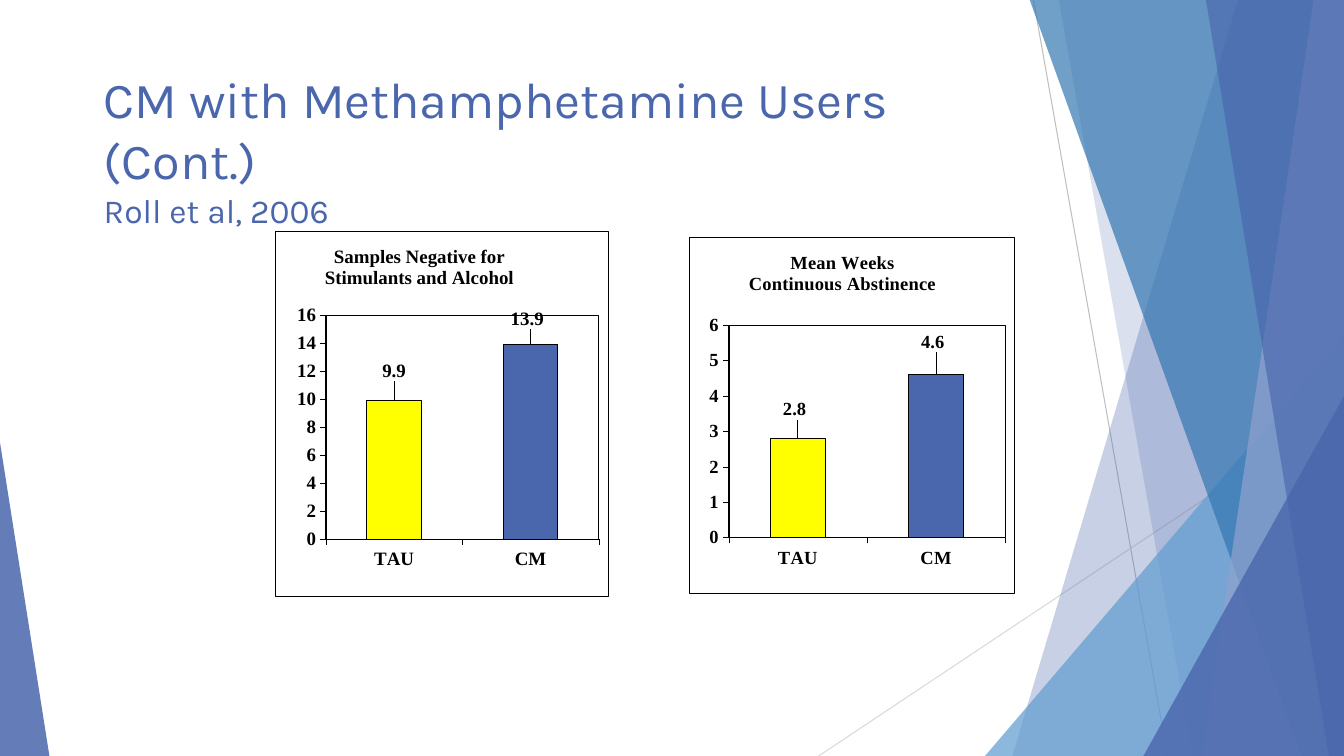
from lxml import etree
from pptx import Presentation
from pptx.chart.data import CategoryChartData
from pptx.dml.color import RGBColor
from pptx.enum.chart import XL_CHART_TYPE as ChartType, XL_LABEL_POSITION as LabelPosition
from pptx.enum.chart import XL_TICK_MARK as TickMark
from pptx.enum.shapes import MSO_CONNECTOR as Connector, MSO_SHAPE as Shape
from pptx.enum.text import MSO_ANCHOR as Anchor
from pptx.oxml import parse_xml
from pptx.oxml.ns import nsdecls, qn
from pptx.util import Inches, Pt

COLORS = {"blue": "4A66AC", "sky": "629DD1", "ocean": "3477B2", "lilac": "90A2CF",
          "yellow": "FFFF00", "black": "000000", "gray": "BFBFBF", "pale": "D9D9D9"}
WIDTH, HEIGHT, TOP = 13.33, 7.5, -0.01
TITLE = [("CM with Methamphetamine Users (Cont.)", 36), ("Roll et al, 2006", 24)]
RAYS = [((10.25, 0), (11.58, HEIGHT), "gray"), ((WIDTH, 4.03), (8.12, HEIGHT), "pale")]
BANDS = [
    ("band", (12.28, 10.04), "blue", 30),
    ("band", (10.5, 11.83), "blue", 20),
    ("triangle", (9.77, 3.33, 3.56, 1), "sky", 72),
    ("band", (10.21, 12.91), "ocean", 70),
    ("band", (13.03, 11.92), "lilac", 70),
    ("band", (11.96, 13.18), "blue", 65),
    ("triangle", (11.34, 3.93, 1.99, 1), "blue", 80),
    ("triangle", (0, 4.39, 0.49, 0), "blue", 85),
]
CATEGORIES = ["TAU", "CM"]
CHARTS = [
    {"title": "Samples Negative for\nStimulants and Alcohol", "values": [9.9, 13.9],
     "box": (2.73, 2.29, 3.3, 3.63), "plot": (0.152, 0.23, 0.821, 0.613),
     "title_at": (0.14, 0.03), "label_shift": [(0, -0.04), (-0.01, -0.03)],
     "max": 16, "step": 2, "size": 13.5},
    {"title": "Mean Weeks\nContinuous Abstinence", "values": [2.8, 4.6],
     "box": (6.83, 2.35, 3.23, 3.54), "plot": (0.123, 0.247, 0.85, 0.596),
     "title_at": (0.175, 0.03), "label_shift": [(-0.01, -0.04), (-0.01, -0.05)],
     "max": 6, "step": 1, "size": 13.2},
]


def color(name):
    return RGBColor.from_string(COLORS[name])


def set_font(font, size, name, tint, bold=False):
    font.size, font.name, font.bold = Pt(size), name, bold
    font.color.rgb = color(tint)


def set_line(line, width, tint="black"):
    line.color.rgb, line.width = color(tint), Pt(width)


def add_ray(page, start, end, tint):
    ray = page.shapes.add_connector(Connector.STRAIGHT, *map(Inches, start + end))
    set_line(ray.line, 0.75, tint)
    etree.SubElement(ray._element.spPr, qn("a:effectLst"))


def add_band(page, kind, where, tint, opacity):
    if kind == "band":
        top_x, bottom_x = where
        corners = [(top_x, TOP), (WIDTH, TOP), (WIDTH, HEIGHT), (bottom_x, HEIGHT)]
        points = [(Inches(x), Inches(y)) for x, y in corners]
        builder = page.shapes.build_freeform(*points[0])
        builder.add_line_segments(points[1:], close=True)
        band = builder.convert_to_shape()
    else:
        left, top, width, apex = where
        box = map(Inches, (left, top, width, HEIGHT - top))
        band = page.shapes.add_shape(Shape.ISOSCELES_TRIANGLE, *box)
        band.adjustments[0] = apex
    band.shadow.inherit = False
    band.line.fill.background()
    band.fill.solid()
    band.fill.fore_color.rgb = color(tint)
    fill = band._element.spPr.find(qn("a:solidFill"))
    etree.SubElement(fill[0], qn("a:alpha"), val=str(opacity * 1000))


def add_title(page):
    box = page.shapes.add_textbox(*map(Inches, (0.93, 0.63, 9.59, 1.62)))
    frame = box.text_frame
    frame.word_wrap, frame.vertical_anchor = True, Anchor.TOP
    para = frame.paragraphs[0]
    para.text = "\v".join(text for text, size in TITLE)
    for span, (text, size) in zip(para.runs, TITLE):
        set_font(span.font, size, "Karla", "blue")


def place(parent, index, values, inner=False, edge=False):
    for old in parent.findall(qn("c:layout")):
        parent.remove(old)
    layout = etree.Element(qn("c:layout"))
    manual = etree.SubElement(layout, qn("c:manualLayout"))
    settings = [("layoutTarget", "inner")] if inner else []
    if edge:
        settings += [("xMode", "edge"), ("yMode", "edge")]
    settings += zip("xywh", values)
    for tag, value in settings:
        etree.SubElement(manual, qn("c:" + tag), val=str(value))
    parent.insert(index, layout)


def outline(width):
    return parse_xml(
        f'<c:spPr {nsdecls("c", "a")}><a:noFill/><a:ln w="{Pt(width)}"><a:solidFill>'
        f'<a:srgbClr val="{COLORS["black"]}"/></a:solidFill></a:ln></c:spPr>')


def style_axis(axis, size):
    axis.has_major_gridlines = False
    axis.major_tick_mark, axis.minor_tick_mark = TickMark.OUTSIDE, TickMark.NONE
    set_font(axis.tick_labels.font, size, "Times New Roman", "black", True)
    set_line(axis.format.line, 0.19)


def add_bar_chart(page, item):
    size = item["size"]
    data = CategoryChartData(number_format="0.0")
    data.categories = CATEGORIES
    data.add_series("Series 1", item["values"])
    frame = page.shapes.add_chart(
        ChartType.COLUMN_CLUSTERED, *map(Inches, item["box"]), data)
    chart = frame.chart
    chart.has_legend = False
    set_font(chart.font, size, "Times New Roman", "black", True)

    chart.has_title = True
    title = chart.chart_title
    title.include_in_layout = False
    title.text_frame.text = item["title"]
    for para in title.text_frame.paragraphs:
        set_font(para.runs[0].font, size, "Times New Roman", "black", True)
    place(title._element, 1, item["title_at"], edge=True)

    for axis in (chart.category_axis, chart.value_axis):
        style_axis(axis, size)
    scale = chart.value_axis
    scale.minimum_scale, scale.maximum_scale = 0, item["max"]
    scale.major_unit = item["step"]
    scale.tick_labels.number_format = "0"
    scale.tick_labels.number_format_is_linked = False

    plot = chart.plots[0]
    plot.gap_width, plot.vary_by_categories = 150, False
    series = plot.series[0]
    labels = series.data_labels
    labels.show_value = True
    labels.number_format, labels.number_format_is_linked = "0.0", False
    labels.position = LabelPosition.OUTSIDE_END
    set_font(labels.font, size, "Times New Roman", "black", True)
    for index, tint in enumerate(("yellow", "blue")):
        point = series.points[index]
        point.format.fill.solid()
        point.format.fill.fore_color.rgb = color(tint)
        set_line(point.format.line, 0.75)
        point.data_label.position = LabelPosition.OUTSIDE_END
        set_font(point.data_label.font, size, "Times New Roman", "black", True)
        label = labels._element.findall(qn("c:dLbl"))[index]
        place(label, 1, item["label_shift"][index])

    space = chart._chartSpace
    area = space.chart.plotArea
    place(area, 0, item["plot"], inner=True, edge=True)
    area.append(outline(0.75))
    space.chart.addnext(outline(0.19))


def main():
    """Build the slide with two bar charts."""
    deck = Presentation()
    deck.slide_width, deck.slide_height = Inches(WIDTH), Inches(HEIGHT)
    page = deck.slides.add_slide(deck.slide_layouts[6])
    for ray in RAYS:
        add_ray(page, *ray)
    for band in BANDS:
        add_band(page, *band)
    add_title(page)
    for item in CHARTS:
        add_bar_chart(page, item)
    deck.save("out.pptx")


if __name__ == "__main__":
    main()
